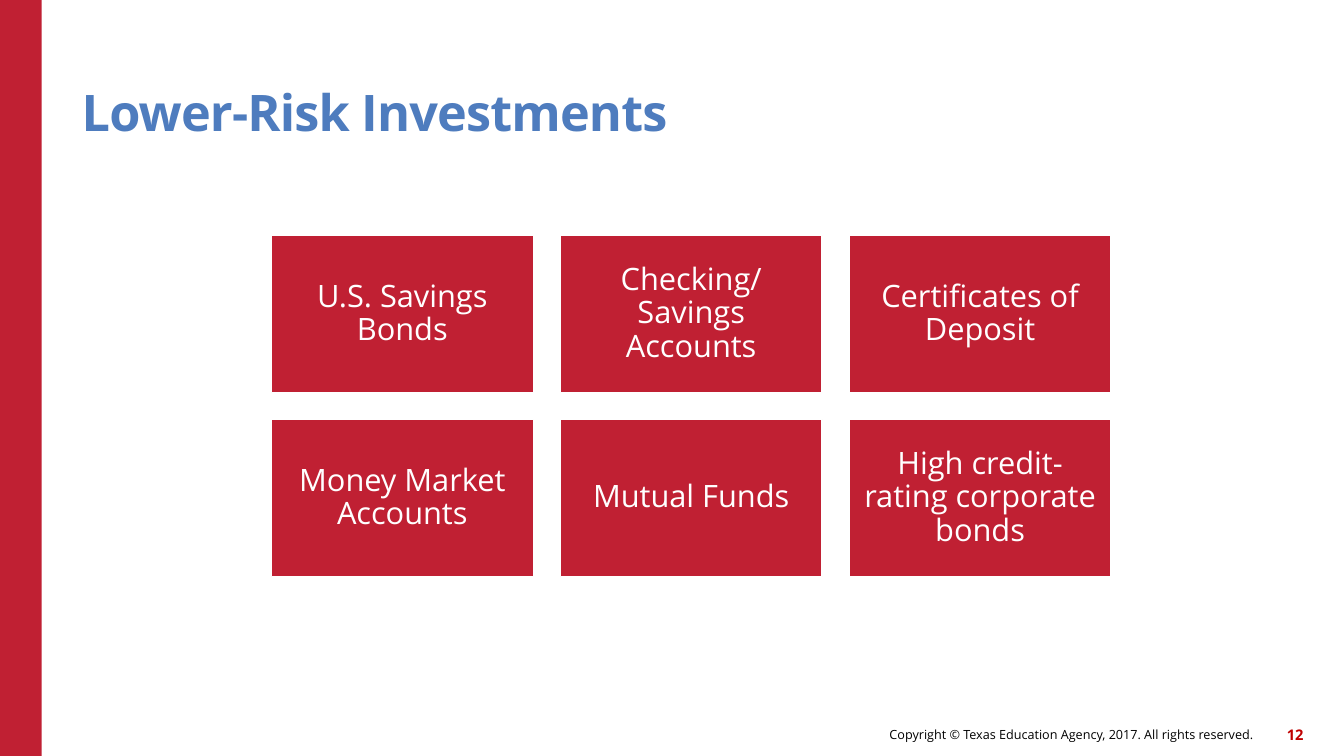
from collections import namedtuple
from dataclasses import dataclass

from pptx import Presentation
from pptx.dml.color import RGBColor
from pptx.enum.shapes import MSO_SHAPE as Shape
from pptx.enum.text import MSO_ANCHOR as Anchor, MSO_AUTO_SIZE as AutoSize, PP_ALIGN as Align
from pptx.util import Cm, Pt

Box = namedtuple("Box", "left top width height")


@dataclass(frozen=True)
class Theme:
    """Colours, font and type sizes of the slide."""
    red: RGBColor = RGBColor(0xC0, 0x20, 0x33)
    number_red: RGBColor = RGBColor(0xC0, 0x00, 0x00)
    blue: RGBColor = RGBColor(0x4E, 0x7C, 0xBE)
    white: RGBColor = RGBColor(0xFF, 0xFF, 0xFF)
    black: RGBColor = RGBColor(0x00, 0x00, 0x00)
    font: str = "Open Sans"
    title_size: float = 36
    card_size: float = 22
    copyright_size: float = 9
    number_size: float = 10.5


THEME = Theme()
INVESTMENTS = [
    ["U.S. Savings Bonds", "Checking/Savings Accounts", "Certificates of Deposit"],
    ["Money Market Accounts", "Mutual Funds", "High credit-rating corporate bonds"],
]


def write(frame, text, size, color, align, anchor=Anchor.MIDDLE, bold=False, inset=0, leading=1.0):
    """Put one styled run into a text frame and return the run."""
    frame.word_wrap = True
    frame.auto_size = AutoSize.NONE
    frame.vertical_anchor = anchor
    frame.margin_left = frame.margin_right = frame.margin_top = frame.margin_bottom = Cm(inset)
    paragraph = frame.paragraphs[0]
    paragraph.alignment = align
    paragraph.line_spacing = leading
    run = paragraph.add_run()
    run.text = text
    run.font.name = THEME.font
    run.font.size = Pt(size)
    run.font.bold = bold
    run.font.color.rgb = color
    return run


def add_block(slide, box):
    """Draw a plain red rectangle filling the box."""
    block = slide.shapes.add_shape(Shape.RECTANGLE, *map(Cm, box))
    block.shadow.inherit = False
    block.fill.solid()
    block.fill.fore_color.rgb = THEME.red
    block.line.fill.background()
    return block


def add_heading(slide, box, text):
    """Place the title placeholder in the box."""
    heading = slide.shapes.title
    heading.left, heading.top, heading.width, heading.height = map(Cm, box)
    run = write(heading.text_frame, text, THEME.title_size, THEME.blue, Align.LEFT,
                Anchor.BOTTOM, bold=True, leading=0.9)
    run._r.get_or_add_rPr().set("spc", "-60")


def add_cards(slide, box, rows, gap):
    """Spread the investment cards over the box with equal gaps."""
    width = (box.width - gap * (len(rows[0]) - 1)) / len(rows[0])
    height = (box.height - gap * (len(rows) - 1)) / len(rows)
    for row, names in enumerate(rows):
        for column, name in enumerate(names):
            card = add_block(slide, Box(box.left + column * (width + gap),
                                        box.top + row * (height + gap), width, height))
            card.line.color.rgb = THEME.white
            card.line.width = Pt(1)
            write(card.text_frame, name, THEME.card_size, THEME.white, Align.CENTER,
                  inset=0.23, leading=0.9)


def add_footer(slide, box, copyright_line, number):
    """Set the copyright line and the page number at the right of the box."""
    number_width, gap = 1.07, 0.2
    copyright_width = box.width - number_width - gap
    parts = [
        (box.left, copyright_width, copyright_line, THEME.copyright_size, THEME.black, False),
        (box.left + copyright_width + gap, number_width, number,
         THEME.number_size, THEME.number_red, True),
    ]
    for left, width, text, size, color, bold in parts:
        label = slide.shapes.add_textbox(*map(Cm, (left, box.top, width, box.height)))
        write(label.text_frame, text, size, color, Align.RIGHT, bold=bold)


def main():
    """Build the slide and save it."""
    deck = Presentation()
    deck.slide_width, deck.slide_height = Cm(33.87), Cm(19.05)
    slide = deck.slides.add_slide(deck.slide_layouts[5])
    add_block(slide, Box(0, 0, 1.05, 19.05))
    add_footer(slide, Box(15.6, 18.1, 17.25, 0.81),
               "Copyright © Texas Education Agency, 2017. All rights reserved.", "12")
    add_heading(slide, Box(2.06, 1.14, 27.94, 2.44), "Lower-Risk Investments")
    add_cards(slide, Box(6.84, 5.93, 21.16, 8.6), INVESTMENTS, gap=0.68)
    deck.save("out.pptx")


if __name__ == "__main__":
    main()
